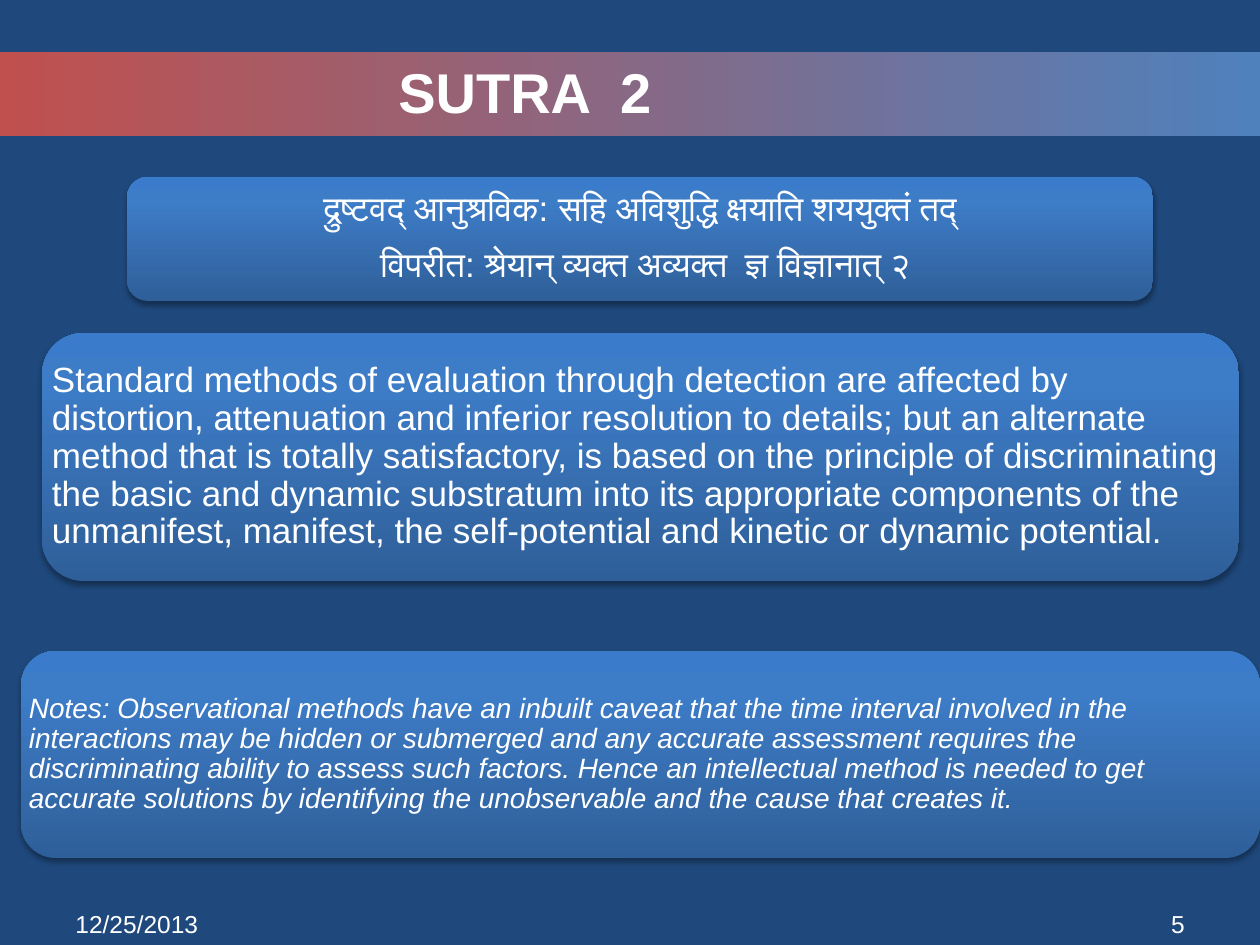
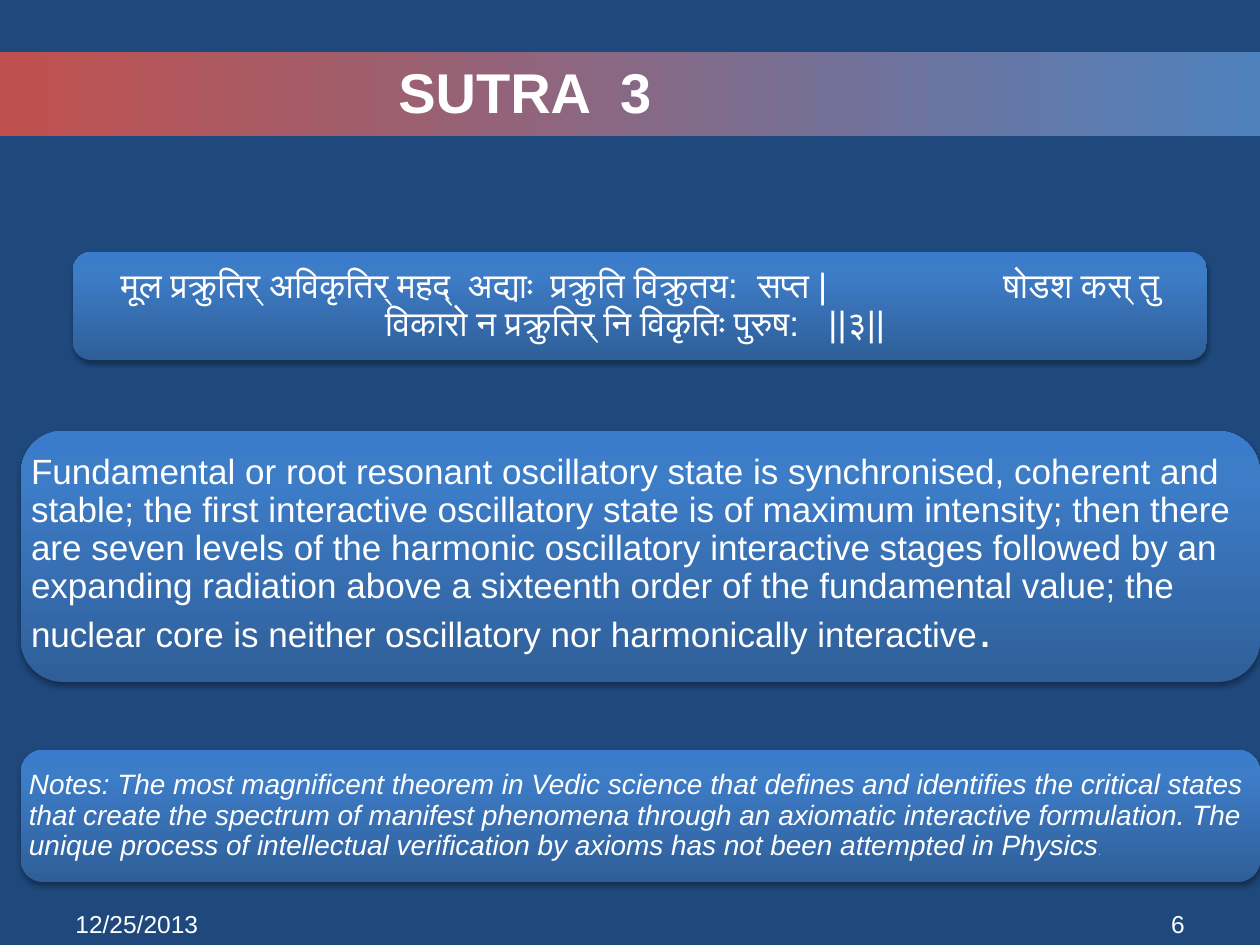
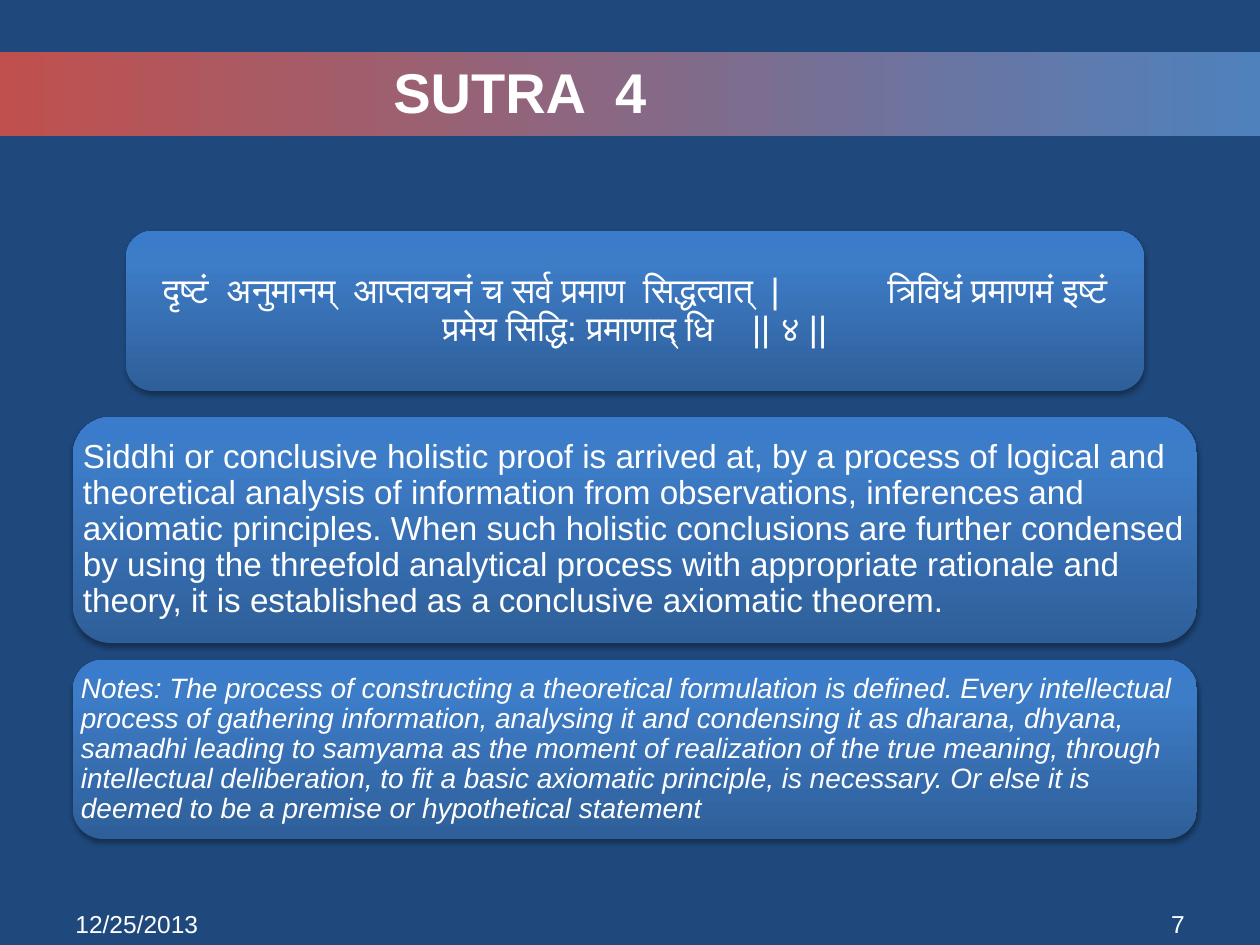
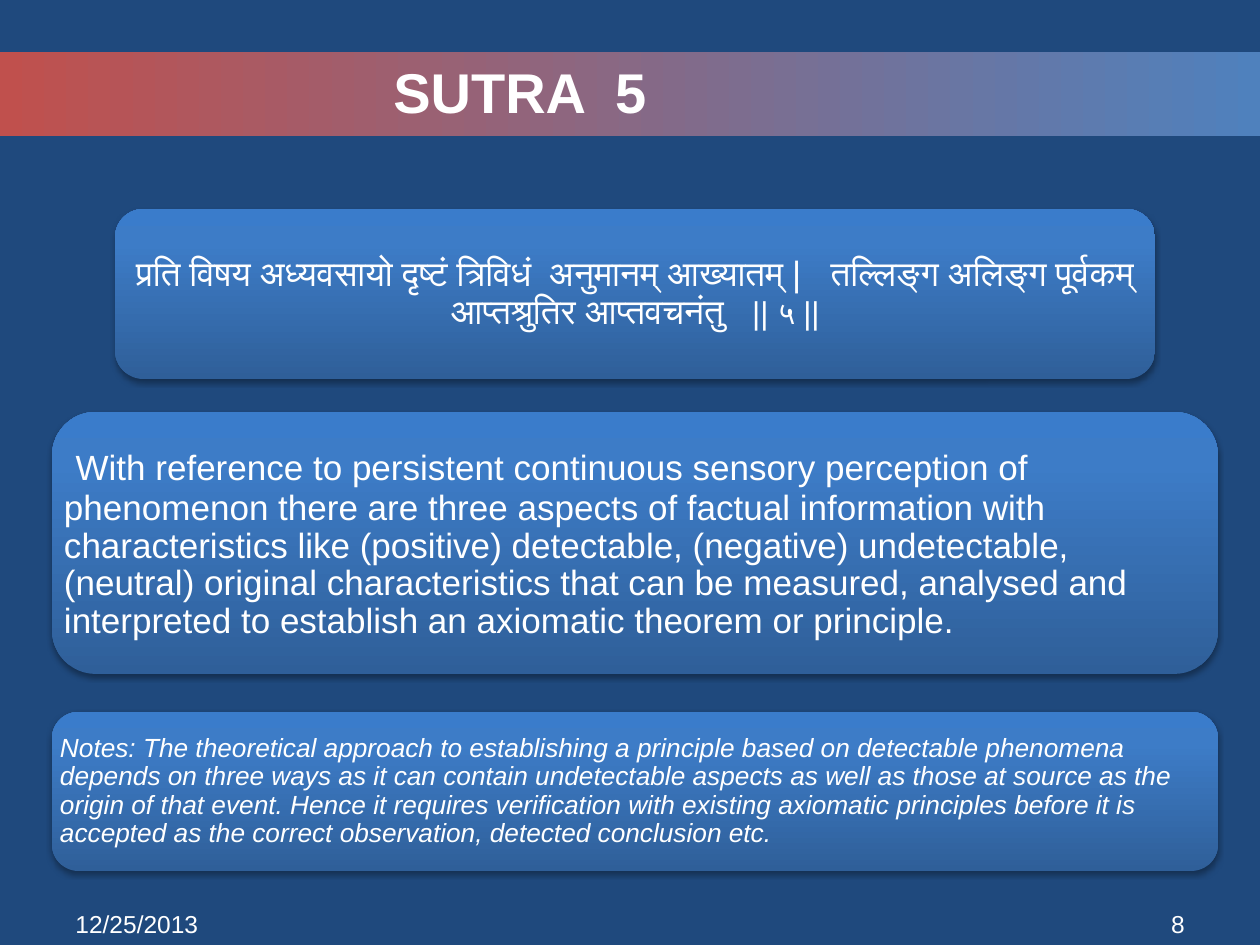
from copy import deepcopy

from lxml import etree
from pptx import Presentation
from pptx import util as u
from pptx.dml.color import RGBColor
from pptx.enum import shapes, text
from pptx.oxml.ns import qn

NAVY = RGBColor(0x1F, 0x49, 0x7D)
RED = RGBColor(0xC0, 0x50, 0x4D)
BLUE = RGBColor(0x4F, 0x81, 0xBD)
CARD_DARK = RGBColor(0x2F, 0x5F, 0x99)
CARD_MID = RGBColor(0x3D, 0x7C, 0xC7)
CARD_LIGHT = RGBColor(0x3A, 0x7C, 0xCB)
WHITE = RGBColor(0xFF, 0xFF, 0xFF)

PX_PER_INCH = 126
WIDTH, HEIGHT = 1260, 945
FONT = "Arial"
DATE = "12/25/2013"
FIRST_NUMBER = 5
SPACE_WIDTH = 0.28
CENTER, RIGHT = text.PP_ALIGN.CENTER, text.PP_ALIGN.RIGHT
TOP, MIDDLE = text.MSO_ANCHOR.TOP, text.MSO_ANCHOR.MIDDLE

BAND_STOPS = [(0, RED), (1, BLUE)]
CARD_STOPS = [(0, CARD_DARK), (0.8, CARD_MID), (1, CARD_LIGHT)]


def px(length):
    return u.Emu(round(length * 914400 / PX_PER_INCH))


def gap(spaces):
    return " ", {"gap": spaces}


class SutraDeck:
    def __init__(self):
        self.deck = Presentation()
        self.deck.slide_width, self.deck.slide_height = px(WIDTH), px(HEIGHT)
        self.page = None

    def new_page(self):
        self.page = self.deck.slides.add_slide(self.deck.slide_layouts[6])
        fill = self.page.background.fill
        fill.solid()
        fill.fore_color.rgb = NAVY

    def panel(self, kind, area, stops, angle):
        shape = self.page.shapes.add_shape(kind, *map(px, area))
        shape.shadow.inherit = False
        shape.line.fill.background()
        shape.fill.gradient()
        shape.fill.gradient_angle = angle
        stop_list = shape._element.spPr.find(".//" + qn("a:gsLst"))
        for _ in stops[len(stop_list):]:
            stop_list.append(deepcopy(stop_list[-1]))
        for stop, (position, color) in zip(shape.fill.gradient_stops, stops):
            stop.position, stop.color.rgb = position, color
        return shape

    def add_shadow(self, shape):
        effects = shape._element.spPr.find(qn("a:effectLst"))
        shadow = etree.SubElement(effects, qn("a:outerShdw"), blurRad=str(u.Pt(3.1)),
                                  dist=str(u.Pt(1.8)), dir="5400000", rotWithShape="0")
        color = etree.SubElement(shadow, qn("a:srgbClr"), val="000000")
        etree.SubElement(color, qn("a:alpha"), val="35000")

    def add_text(self, area, paras, size, align=None, anchor=TOP, inset=None, para_format=None, **font):
        frame = self.page.shapes.add_textbox(*map(px, area)).text_frame
        frame.word_wrap = True
        frame.vertical_anchor = anchor
        if inset is not None:
            for side in ("left", "top", "right", "bottom"):
                setattr(frame, f"margin_{side}", px(inset))
        for index, spans in enumerate(paras):
            para = frame.add_paragraph() if index else frame.paragraphs[0]
            for name, value in {"alignment": align, **(para_format or {})}.items():
                setattr(para, name, value)
            for words, changes in spans:
                self.add_span(para, words, {"size": size, **font, **changes})

    def add_span(self, para, words, values):
        span = para.add_run()
        span.text = words
        spaces = values.pop("gap", 1)
        if spaces > 1:
            spread = (spaces - 1) * SPACE_WIDTH * values["size"]
            span._r.get_or_add_rPr().set("spc", str(round(spread * 100)))
        span.font.color.rgb = WHITE
        for name, value in {"name": FONT, **values, "size": u.Pt(values["size"])}.items():
            setattr(span.font, name, value)

    def header(self, title, width):
        self.panel(shapes.MSO_SHAPE.RECTANGLE, (0, 52, WIDTH, 84), BAND_STOPS, 0)
        self.add_text((63, 52, width, 79), [[(title, {})]], 32, CENTER, MIDDLE, bold=True)

    def footer(self, number):
        for left, words, align in ((63, DATE, None), (903, str(number), RIGHT)):
            self.add_text((left, 903, 294, 34), [[(words, {})]], 14, align)

    def card(self, area, paras, size=20, align=None, **font):
        self.add_shadow(self.panel(shapes.MSO_SHAPE.ROUNDED_RECTANGLE, area, CARD_STOPS, 90))
        if isinstance(paras, str):
            paras = [[(paras, {})]]
        first_size = paras[0][0][1].get("size", size)
        spacing = {"line_spacing": 0.9, "space_after": u.Pt(round(size * 0.35))}
        self.add_text(area, paras, size, align, MIDDLE, round(first_size * 0.52), spacing, **font)


SUTRAS = [
    {
        "title": "SUTRA  2", "title_width": 924,
        "verse": ((127, 177, 1026, 124), [
            [("द्रुष्टवद् आनुश्रविक: सहि अविशुद्धि क्षयाति शययुक्तं तद्", {})],
            [(" ", {"size": 24}), ("विपरीत: श्रेयान् व्यक्त अव्यक्त  ज्ञ विज्ञानात् २", {})],
        ]),
        "meaning": ((42, 333, 1197, 248),
                    "Standard methods of evaluation through detection are affected by distortion, "
                    "attenuation and inferior resolution to details; but an alternate method that is "
                    "totally satisfactory, is based on the principle of discriminating the basic and "
                    "dynamic substratum into its appropriate components of the unmanifest, manifest, "
                    "the self-potential and kinetic or dynamic potential."),
        "notes": ((21, 651, 1239, 207),
                  "Notes: Observational methods have an inbuilt caveat that the time interval involved "
                  "in the interactions may be hidden or submerged and any accurate assessment requires "
                  "the discriminating ability to assess such factors. Hence an intellectual method is "
                  "needed to get accurate solutions by identifying the unobservable and the cause that "
                  "creates it."),
    },
    {
        "title": "SUTRA  3", "title_width": 924,
        "verse": ((73, 252, 1134, 108), [[
            ("मूल प्रक्रुतिर् अविकृतिर् महद्  अद्याः  प्रक्रुति विक्रुतय:  सप्त |", {}), gap(18),
            ("षोडश कस् तु विकारो न प्रक्रुतिर् नि विकृतिः पुरुष:", {}), gap(3), ("||३|| ", {}),
        ]]),
        "meaning": ((21, 431, 1239, 251), [[
            ("Fundamental or root resonant oscillatory state is synchronised, coherent and stable; "
             "the first interactive oscillatory state is of maximum intensity; then there are seven "
             "levels of the harmonic oscillatory interactive stages followed by an expanding "
             "radiation above a sixteenth order of the fundamental value; the nuclear core is "
             "neither oscillatory nor harmonically interactive", {}),
            (".", {"size": 28}),
        ]]),
        "notes": ((21, 750, 1239, 132), [[
            ("Notes: The most magnificent theorem in Vedic science that defines and identifies the "
             "critical states that create the spectrum of manifest phenomena through an axiomatic "
             "interactive formulation. The unique process of intellectual verification by axioms "
             "has not been attempted in Physics", {}),
            (".", {"size": 5}),
        ]]),
    },
    {
        "title": "SUTRA  4", "title_width": 914,
        "verse": ((126, 231, 1018, 160), [[
            ("दृष्टं  अनुमानम्  आप्तवचनं च सर्व प्रमाण  सिद्धत्वात्  |", {}), gap(11),
            ("त्रिविधं प्रमाणमं इष्टं प्रमेय सिद्धि: प्रमाणाद् धि", {}), gap(4), ("|| ४ ||", {}),
        ]]),
        "meaning": ((73, 417, 1124, 226),
                    "Siddhi or conclusive holistic proof is arrived at, by a process of logical and "
                    "theoretical analysis of information from observations, inferences and axiomatic "
                    "principles. When such holistic conclusions are further condensed by using the "
                    "threefold analytical process with appropriate rationale and theory, it is "
                    "established as a conclusive axiomatic theorem."),
        "meaning_size": 19,
        "notes": ((73, 660, 1124, 179),
                  "Notes: The process of constructing a theoretical formulation is defined. Every "
                  "intellectual process of gathering information, analysing it and condensing it as "
                  "dharana, dhyana, samadhi leading to samyama as the moment of realization of the "
                  "true meaning, through intellectual deliberation, to fit a basic axiomatic "
                  "principle, is necessary. Or else it is deemed to be a premise or hypothetical "
                  "statement"),
    },
    {
        "title": "SUTRA  5", "title_width": 914,
        "verse": ((115, 209, 1040, 170), [[
            ("प्रति विषय अध्यवसायो दृष्टं त्रिविधं  अनुमानम् आख्यातम् |", {}), gap(3),
            ("तल्लिङ्ग अलिङ्ग पूर्वकम् आप्तश्रुतिर आप्तवचनंतु", {}), gap(3),
            ("|| ५ ||", {"size": 18}),
        ]]),
        "meaning": ((52, 412, 1166, 262), [[
            (" ", {"size": 24}),
            ("With reference to persistent continuous sensory perception of phenomenon there are "
             "three aspects of factual information with characteristics like (positive) detectable, "
             "(negative) undetectable, (neutral) original characteristics that can be measured, "
             "analysed and interpreted to establish an axiomatic theorem or principle.", {}),
        ]]),
        "notes": ((52, 712, 1166, 159),
                  "Notes: The theoretical approach to establishing a principle based on detectable "
                  "phenomena depends on three ways as it can contain undetectable aspects as well as "
                  "those at source as the origin of that event. Hence it requires verification with "
                  "existing axiomatic principles before it is accepted as the correct observation, "
                  "detected conclusion etc."),
        "notes_size": 15,
    },
]


def main():
    show = SutraDeck()
    for number, sutra in enumerate(SUTRAS, FIRST_NUMBER):
        show.new_page()
        show.header(sutra["title"], sutra["title_width"])
        show.card(*sutra["verse"], align=CENTER)
        show.card(*sutra["meaning"], size=sutra.get("meaning_size", 20))
        show.card(*sutra["notes"], size=sutra.get("notes_size", 16), italic=True)
        show.footer(number)
    show.deck.save("out.pptx")


if __name__ == "__main__":
    main()
